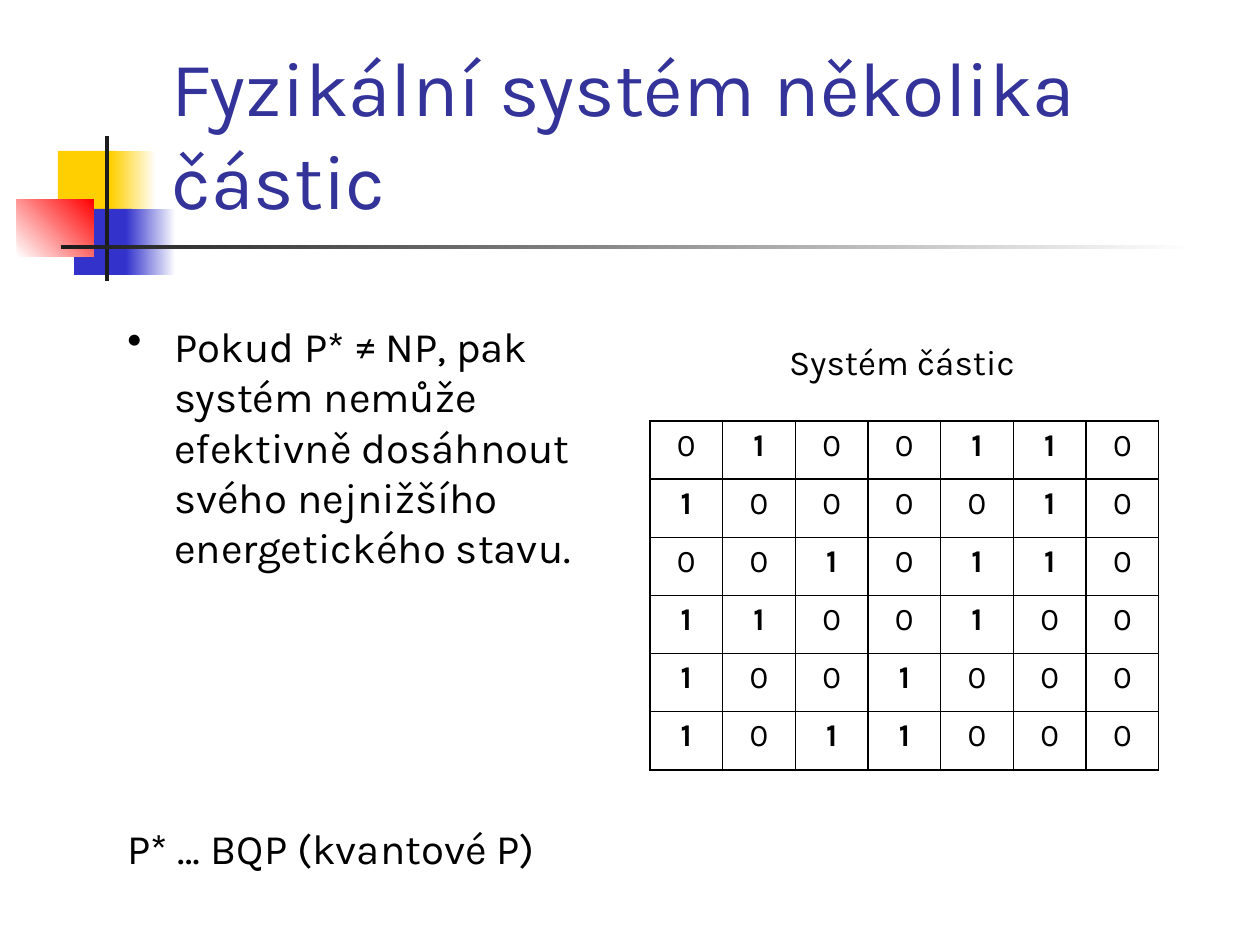
from lxml.etree import SubElement
from pptx import Presentation
from pptx.dml.color import RGBColor
from pptx.enum.shapes import MSO_SHAPE
from pptx.enum.text import MSO_ANCHOR, MSO_AUTO_SIZE, PP_ALIGN
from pptx.oxml.ns import qn
from pptx.util import Pt

SCALE = 914400 / 126
FONT = "Karla"
BLACK, WHITE, DARK = "000000", "FFFFFF", "1C1C1C"
GOLD, BLUE, RED, NAVY = "FFCF01", "3333CC", "FF0000", "333399"
BITS = ["0100110", "1000010", "0010110", "1100100", "1001000", "1011000"]


def px(n):
    return round(n * SCALE)


def rgb(code):
    return RGBColor.from_string(code)


def place(shape, box):
    shape.left, shape.top, shape.width, shape.height = map(px, box)


def add_run(para, text, size, color=BLACK, font=FONT, bold=False):
    run = para.add_run()
    run.text = text
    run.font.size = Pt(size)
    run.font.name = font
    run.font.bold = bold
    run.font.color.rgb = rgb(color)


def add_frame(slide, box):
    frame = slide.shapes.add_textbox(*map(px, box)).text_frame
    frame.word_wrap = True
    return frame


def add_block(slide, box, colors, angle=0):
    """Borderless rectangle: one colour is solid, two make a gradient."""
    block = slide.shapes.add_shape(MSO_SHAPE.RECTANGLE, *map(px, box))
    block.shadow.inherit = False
    block.line.fill.background()
    if len(colors) == 1:
        block.fill.solid()
        block.fill.fore_color.rgb = rgb(colors[0])
        return
    block.fill.gradient()
    block.fill.gradient_angle = angle
    for stop, color in zip(block.fill.gradient_stops, colors):
        stop.color.rgb = rgb(color)


def add_motif(slide, box):
    """Coloured squares with a crossing bar and rule."""
    left, top, width, height = box
    parts = [
        ((41, 15, 60, 66), [GOLD], 0),
        ((94, 15, 45, 66), [GOLD, WHITE], 0),
        ((57, 73, 58, 66), [BLUE], 0),
        ((109, 73, 50, 66), [BLUE, WHITE], 0),
        ((0, 63, 77, 58), [WHITE, RED], 45),
        ((88, 0, 4, height), [DARK], 0),
        ((44, 109, width - 44, 4), [DARK, WHITE], 0),
    ]
    for (x, y, w, h), colors, angle in parts:
        add_block(slide, (left + x, top + y, w, h), colors, angle)


def add_title(slide, box):
    title = slide.shapes.title
    place(title, box)
    slide.shapes.element.append(title.element)  # in front of the motif
    frame = title.text_frame
    frame.word_wrap = True
    frame.auto_size = MSO_AUTO_SIZE.NONE
    frame.vertical_anchor = MSO_ANCHOR.BOTTOM
    para = frame.paragraphs[0]
    para.alignment = PP_ALIGN.LEFT
    add_run(para, "Fyzikální systém několika částic", 44, NAVY)


def add_bullet(para, indent):
    props = para._p.get_or_add_pPr()
    props.set("marL", str(px(indent)))
    props.set("indent", str(-px(indent)))
    SubElement(props, qn("a:buChar"), char="•")


def add_body(slide, box):
    frame = add_frame(slide, box)
    claim = frame.paragraphs[0]
    add_bullet(claim, 47)
    add_run(claim, "Pokud P* ", 24)
    add_run(claim, "≠ ", 24, font="Calibri")
    add_run(claim, "NP, pak systém nemůže efektivně dosáhnout svého "
            "nejnižšího energetického stavu.", 24)
    note = frame.add_paragraph()
    note.space_before = Pt(143)
    add_run(note, "P* … BQP (kvantové P)", 24)


def add_border(cell):
    props = cell._tc.get_or_add_tcPr()
    for spot, side in enumerate(("a:lnL", "a:lnR", "a:lnT", "a:lnB")):
        line = SubElement(props, qn(side), w=str(Pt(1)))
        fill = SubElement(line, qn("a:solidFill"))
        SubElement(fill, qn("a:srgbClr"), val=BLACK)
        props.insert(spot, line)


def add_grid(slide, box):
    """Table of bits with the ones in bold."""
    left, top, width, height = box
    rows, cols = len(BITS), len(BITS[0])
    table = slide.shapes.add_table(rows, cols, *map(px, box)).table
    for col in table.columns:
        col.width = px(width / cols)
    for row, bits in zip(table.rows, BITS):
        row.height = px(height / rows)
        for cell, bit in zip(row.cells, bits):
            cell.fill.solid()
            cell.fill.fore_color.rgb = rgb(WHITE)
            add_border(cell)
            para = cell.text_frame.paragraphs[0]
            para.alignment = PP_ALIGN.CENTER
            add_run(para, bit, 18, bold=bit == "1")


def add_system(slide, box):
    """Caption above the grid of particles."""
    left, top, width, height = box
    para = add_frame(slide, (left + 98, top, 308, 55)).paragraphs[0]
    para.alignment = PP_ALIGN.CENTER
    add_run(para, "Systém částic", 20)
    add_grid(slide, (left, top + 87, width, height - 87))


def main():
    deck = Presentation()
    deck.slide_width, deck.slide_height = px(1260), px(945)
    slide = deck.slides.add_slide(deck.slide_layouts[5])
    add_motif(slide, (17, 136, 1178, 145))
    add_title(slide, (159, 29, 1073, 202))
    add_system(slide, (650, 334, 509, 436))
    add_body(slide, (115, 314, 477, 572))
    deck.save("out.pptx")


if __name__ == "__main__":
    main()
